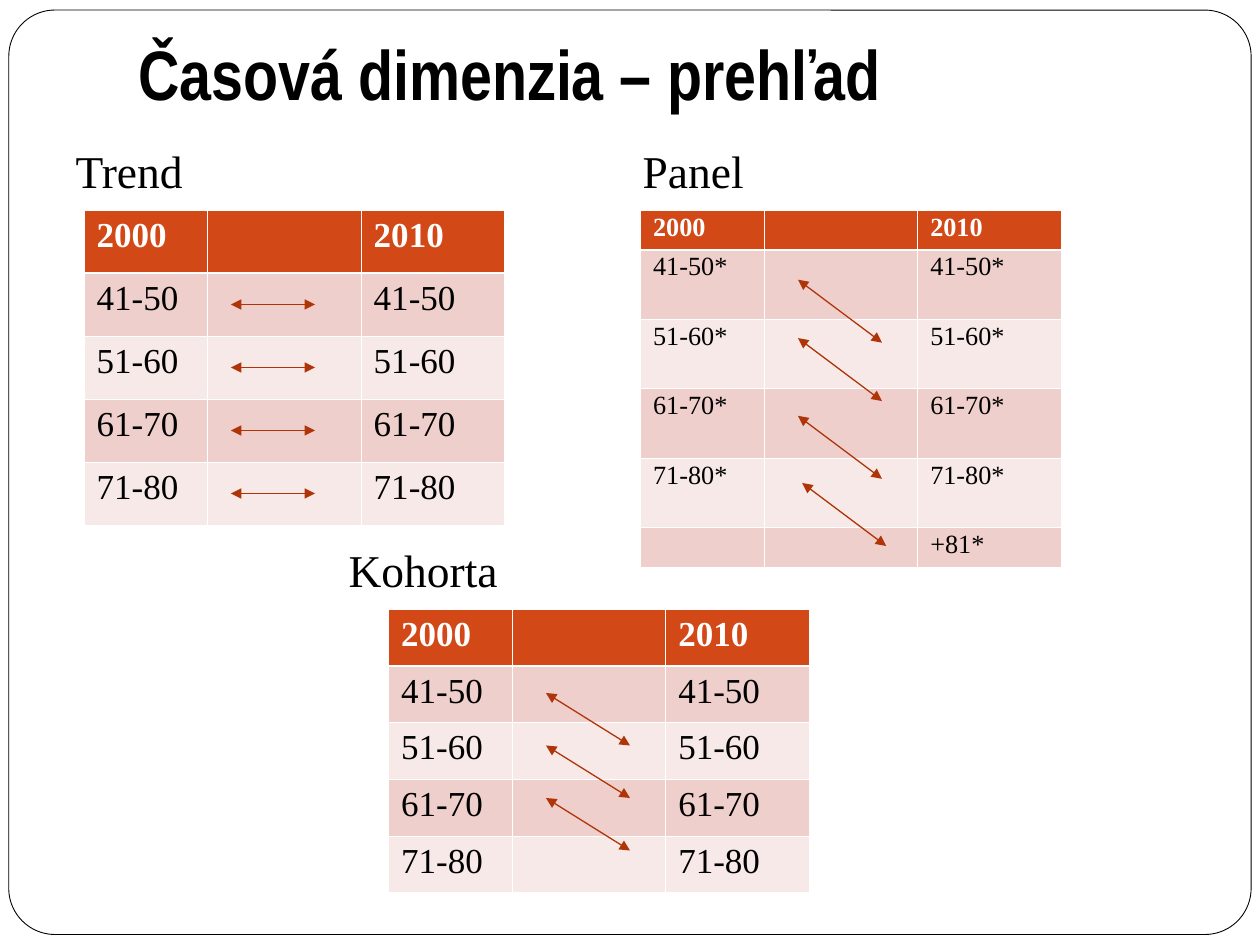
from lxml import etree
from pptx import Presentation
from pptx import util as u
from pptx.dml.color import RGBColor
from pptx.enum import shapes, text
from pptx.oxml.ns import qn

BLACK = RGBColor(0, 0, 0)
WHITE = RGBColor(255, 255, 255)
HEAD = RGBColor(0xD3, 0x48, 0x17)
DARK = RGBColor(0xEF, 0xCF, 0xCC)
PALE = RGBColor(0xF7, 0xE9, 0xE7)
RUST = RGBColor(0xAF, 0x34, 0x08)
SERIF = "Times New Roman"

TITLE = "Časová dimenzia – prehľad"
AGES = ["41-50", "51-60", "61-70", "71-80"]
YEARS = ("2000", "", "2010")
PLAIN = [YEARS] + [(age, "", age) for age in AGES]
STARS = [YEARS] + [(age + "*", "", age + "*") for age in AGES] + [("", "", "+81*")]
COLS = (11.76, 14.64, 13.68)
PARTS = [
    dict(name="Trend", box=(6, 13, 48, 37), at=(8, 20), data=PLAIN, rows=[6] * 5,
         size=20, pad=(0.06, 0.05), rise=0,
         marks=[(22, 29 + 6 * i) for i in range(4)]),
    dict(name="Panel", box=(60, 13, 51, 39), at=(61, 20), data=STARS,
         rows=[3.72] + [6.62] * 4 + [3.72], size=15, pad=(0.03, 0.03), rise=6,
         marks=[(76, 26.64), (76, 32.2), (76, 39.6), (76.4, 46)]),
    dict(name="Kohorta", box=(32, 51, 51, 37), at=(37, 58), data=PLAIN, rows=[5.23] * 5,
         size=20, pad=(0.06, 0.05), rise=5,
         marks=[(52, 66 + 5 * i) for i in range(3)]),
]

deck = Presentation()
deck.slide_width, deck.slide_height = u.Inches(10), u.Inches(7.5)
UNIT = deck.slide_width / 120


def grid(*vals):
    return [round(v * UNIT) for v in vals]


def apply(obj, **vals):
    for key, val in vals.items():
        setattr(obj, key, val)


def style(font, color, **vals):
    apply(font, **vals)
    font.color.rgb = color


def place(shape, box):
    apply(shape, **dict(zip(("left", "top", "width", "height"), grid(*box))))


def border(cell, side, index, width):
    line = etree.Element(qn("a:" + side), w=str(u.Pt(width)))
    fill = etree.SubElement(line, qn("a:solidFill"))
    etree.SubElement(fill, qn("a:srgbClr"), val=str(WHITE))
    cell._tc.get_or_add_tcPr().insert(index, line)


def fill_cell(cell, word, row, part):
    top, low = part["pad"]
    apply(cell, margin_left=u.Inches(0.1), margin_right=u.Inches(0.1),
          margin_top=u.Inches(top), margin_bottom=u.Inches(low))
    cell.fill.solid()
    cell.fill.fore_color.rgb = HEAD if row == 0 else DARK if row % 2 else PALE
    thick = {0: "lnB", 1: "lnT"}.get(row)
    for i, side in enumerate(("lnL", "lnR", "lnT", "lnB")):
        border(cell, side, i, 1.47 if side == thick else 0.45)
    para = cell.text_frame.paragraphs[0]
    if word:
        para.line_spacing = 0.96
        run = para.add_run()
        run.text = word
        style(run.font, BLACK if row else WHITE, name=SERIF,
              size=u.Pt(part["size"]), bold=row == 0)
    else:
        etree.SubElement(para._p, qn("a:endParaRPr"), sz=str(part["size"] * 100))


def add_grid(slide, part):
    data, rows = part["data"], part["rows"]
    table = slide.shapes.add_table(
        len(rows), len(COLS), *grid(*part["at"], sum(COLS), sum(rows))).table
    for col, width in zip(table.columns, grid(*COLS)):
        col.width = width
    for row, height in zip(table.rows, grid(*rows)):
        row.height = height
    for r, words in enumerate(data):
        for c, word in enumerate(words):
            fill_cell(table.cell(r, c), word, r, part)


def add_arrow(slide, x, y, rise):
    arrow = slide.shapes.add_connector(
        shapes.MSO_CONNECTOR.STRAIGHT, *grid(x, y, x + 8, y + rise))
    arrow.line.color.rgb = RUST
    arrow.line.width = u.Pt(0.75)
    line = arrow.line._get_or_add_ln()
    for end in ("headEnd", "tailEnd"):
        etree.SubElement(line, qn("a:" + end), type="triangle")
    etree.SubElement(arrow._element.spPr, qn("a:effectLst"))


def add_label(shape, part):
    place(shape, part["box"])
    frame = shape.text_frame
    apply(frame, vertical_anchor=text.MSO_ANCHOR.TOP, word_wrap=True,
          auto_size=text.MSO_AUTO_SIZE.NONE)
    para = frame.paragraphs[0]
    run = para.add_run()
    run.text = part["name"]
    para.space_before = u.Pt(0)
    props = para._p.get_or_add_pPr()
    props.set("marL", str(u.Inches(0.3)))
    props.set("indent", str(u.Inches(-0.3)))
    etree.SubElement(props, qn("a:buNone"))
    style(run.font, BLACK, name=SERIF, size=u.Pt(26), bold=False)


def add_title(shape):
    place(shape, (12, 2.28, 102, 9.84))
    frame = shape.text_frame
    apply(frame, vertical_anchor=text.MSO_ANCHOR.BOTTOM, word_wrap=True,
          auto_size=text.MSO_AUTO_SIZE.NONE, margin_bottom=u.Inches(0.1))
    para = frame.paragraphs[0]
    para.alignment = text.PP_ALIGN.LEFT
    run = para.add_run()
    run.text = TITLE
    style(run.font, BLACK, name="Arial Narrow", size=u.Pt(40), bold=True)


def add_frame(slide):
    frame = slide.shapes.add_shape(shapes.MSO_SHAPE.ROUNDED_RECTANGLE,
                                   *grid(0.84, 0.96, 118.32, 88.04))
    frame.adjustments[0] = 0.05
    frame.shadow.inherit = False
    frame.fill.background()
    frame.line.color.rgb = BLACK
    frame.line.width = u.Pt(0.5)
    slide.shapes._spTree.insert(2, frame._element)


def main():
    slide = deck.slides.add_slide(deck.slide_layouts[4])
    title, *labels, spare = slide.placeholders
    spare._element.getparent().remove(spare._element)
    add_frame(slide)
    add_title(title)
    for label, part in zip(labels, PARTS):
        add_label(label, part)
        add_grid(slide, part)
        for x, y in part["marks"]:
            add_arrow(slide, x, y, part["rise"])
    deck.save("out.pptx")


if __name__ == "__main__":
    main()
